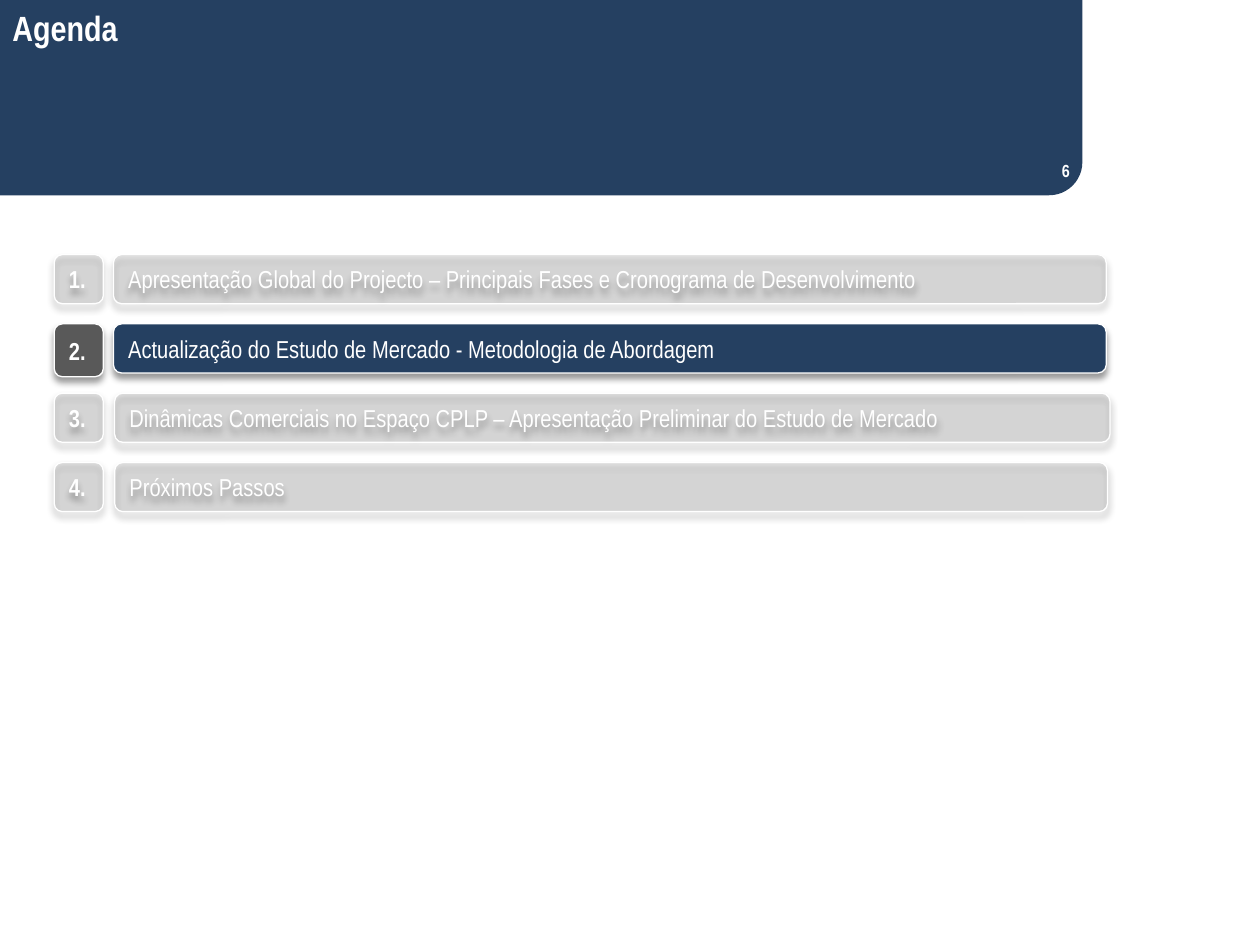
from dataclasses import dataclass

from lxml.etree import SubElement
from pptx import Presentation
from pptx.dml.color import RGBColor
from pptx.enum.shapes import MSO_SHAPE
from pptx.enum.text import MSO_ANCHOR, PP_ALIGN
from pptx.oxml.ns import qn
from pptx.util import Inches, Pt


@dataclass(frozen=True)
class Theme:
    font: str = "Arial Narrow"
    navy: str = "254061"
    gray: str = "595959"
    white: str = "FFFFFF"
    shadow: str = "000000"
    title: int = 20
    body: int = 14
    number: int = 10
    faded: int = 17
    shadow_alpha: int = 40


class AgendaSlide:
    def __init__(self, prs, theme):
        self.theme = theme
        self.s = prs.slides.add_slide(prs.slide_layouts[6])

    def set_text(self, sp, text, size, bold=False, align=PP_ALIGN.LEFT,
                 anchor=MSO_ANCHOR.MIDDLE):
        tf = sp.text_frame
        tf.word_wrap = True
        tf.vertical_anchor = anchor
        p = tf.paragraphs[0]
        p.text = text
        p.alignment = align
        p.font.name = self.theme.font
        p.font.size = Pt(size)
        p.font.bold = bold
        p.font.color.rgb = RGBColor.from_string(self.theme.white)

    def shape(self, kind, box, color):
        sp = self.s.shapes.add_shape(kind, *map(Inches, box))
        sp.shadow.inherit = False
        sp.fill.solid()
        sp.fill.fore_color.rgb = RGBColor.from_string(color)
        sp.line.fill.background()
        return sp

    def band(self, box, corner):
        sp = self.shape(MSO_SHAPE.ROUND_2_DIAG_RECTANGLE, box, self.theme.navy)
        sp.adjustments[0] = corner
        sp.adjustments[1] = 0

    def label(self, box, text, size, **style):
        sp = self.s.shapes.add_textbox(*map(Inches, box))
        self.set_text(sp, text, size, bold=True, **style)

    def tile(self, box, text, color, faded, bold=False):
        sp = self.shape(MSO_SHAPE.ROUNDED_RECTANGLE, box, color)
        sp.line.color.rgb = RGBColor.from_string(self.theme.white)
        sp.line.width = Pt(0.75)
        if faded:
            clr = sp._element.spPr.find(qn("a:solidFill"))[0]
            self.alpha(clr, self.theme.faded)
        self.drop_shadow(sp)
        self.set_text(sp, text, self.theme.body, bold)

    def drop_shadow(self, sp):
        effects = sp._element.spPr.find(qn("a:effectLst"))
        outer = SubElement(effects, qn("a:outerShdw"), blurRad=str(Pt(4)),
                           dist=str(Pt(3)), dir="5400000", rotWithShape="0")
        clr = SubElement(outer, qn("a:srgbClr"), val=self.theme.shadow)
        self.alpha(clr, self.theme.shadow_alpha)

    def alpha(self, clr, percent):
        SubElement(clr, qn("a:alpha"), val=str(percent * 1000))

    def agenda(self, topics, current):
        for i, (topic, left, width) in enumerate(topics):
            top = 2.02 + 0.55 * i
            active = i + 1 == current
            color = self.theme.navy if active else self.theme.gray
            self.tile((left, top, width, 0.39), topic, color, not active)
            self.tile((0.43, top, 0.39, 0.42 if active else 0.39), f"{i + 1}.",
                      self.theme.gray, not active, bold=True)


def main():
    prs = Presentation()
    prs.slide_width = Inches(10)
    prs.slide_height = Inches(7.5)
    theme = Theme()
    slide = AgendaSlide(prs, theme)

    slide.band((0, 0, 8.59, 1.55), 0.17)
    slide.band((0, 0, 7.64, 0.9), 0)
    slide.label((0, 0, 4.41, 0.44), "Agenda", theme.title, anchor=MSO_ANCHOR.TOP)
    slide.label((6.26, 1.15, 2.33, 0.4), "6", theme.number, align=PP_ALIGN.RIGHT)
    slide.agenda([
        ("Apresentação Global do Projecto – Principais Fases e Cronograma de "
         "Desenvolvimento", 0.9, 7.88),
        ("Actualização do Estudo de Mercado - Metodologia de Abordagem", 0.9, 7.88),
        ("Dinâmicas Comerciais no Espaço CPLP – Apresentação Preliminar do "
         "Estudo de Mercado", 0.91, 7.9),
        ("Próximos Passos", 0.91, 7.88),
    ], current=2)

    prs.save("out.pptx")


if __name__ == "__main__":
    main()
